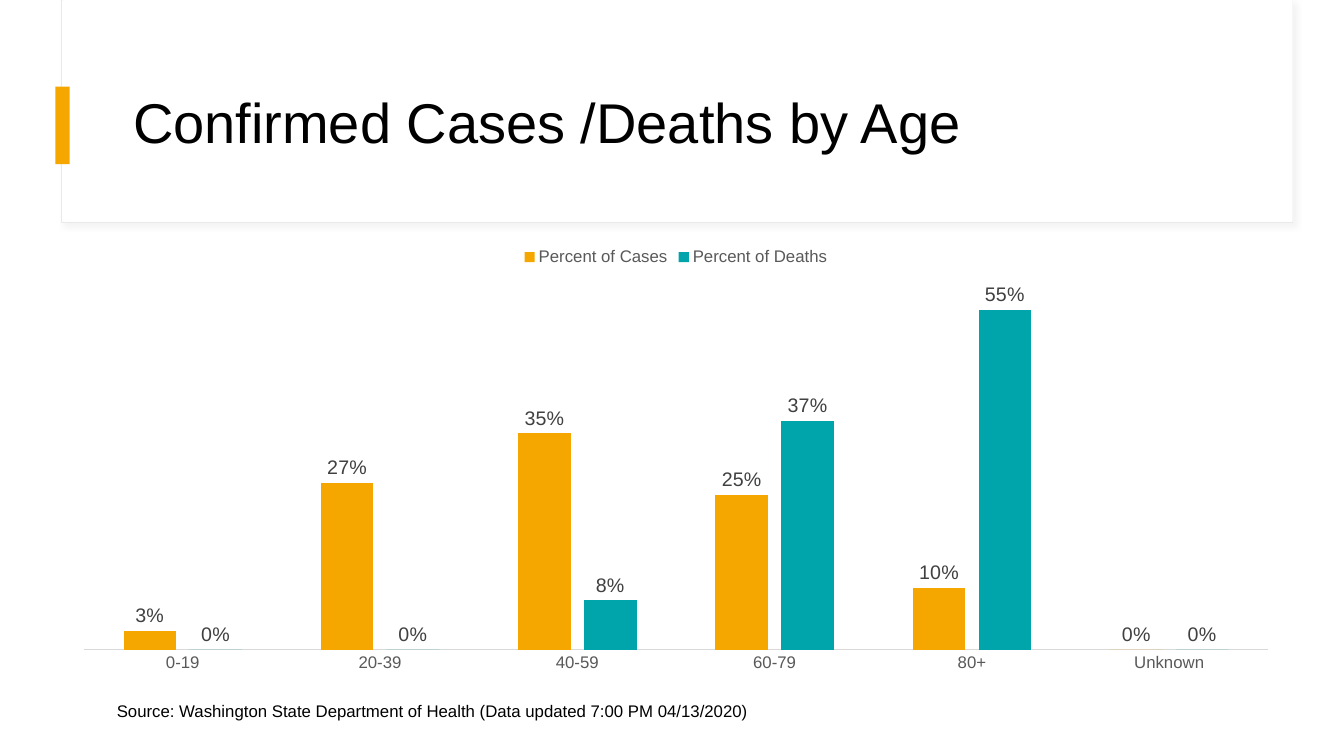
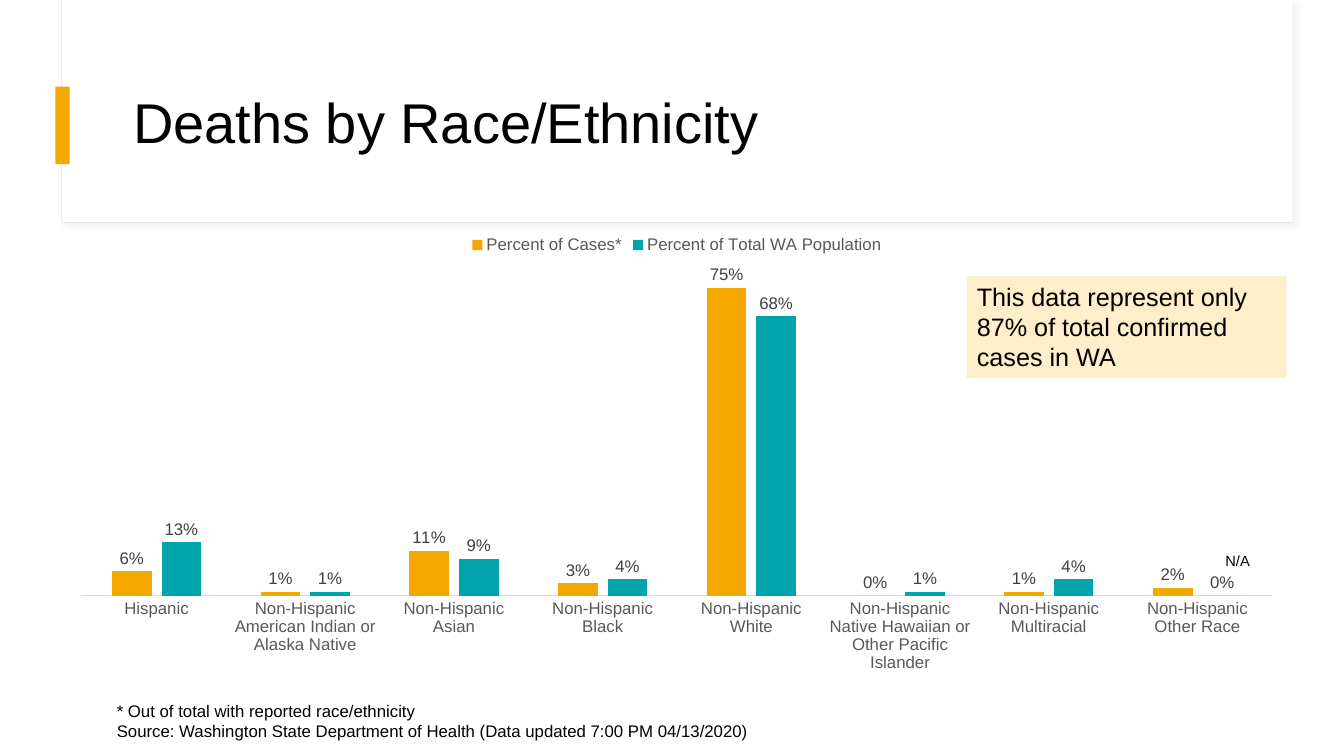
import pptx
import pptx.chart.data
import pptx.dml.color
import pptx.enum.chart
import pptx.enum.shapes
import pptx.enum.text
import pptx.oxml
import pptx.oxml.ns
import pptx.util

Inches = pptx.util.Inches
Pt = pptx.util.Pt
ANCHOR = pptx.enum.text.MSO_ANCHOR
ALIGN = pptx.enum.text.PP_ALIGN
FONT = "Arial"
COLORS = {
    "black": "000000",
    "white": "FFFFFF",
    "gold": "F5A700",
    "teal": "00A5AB",
    "cream": "FFEECA",
    "edge": "E9E9E9",
    "rule": "D9D9D9",
    "label": "404040",
    "axis": "595959",
}
SOURCE = "Source: Washington State Department of Health (Data updated 7:00 PM 04/13/2020)"

PAGES = [
    {
        "title": "Confirmed Cases /Deaths by Age",
        "box": (0.59, 2.35, 12.23, 4.4),
        "groups": ["0-19", "20-39", "40-59", "60-79", "80+", "Unknown"],
        "series": [
            ("Percent of Cases", [0.03, 0.27, 0.35, 0.25, 0.1, 0]),
            ("Percent of Deaths", [0, 0, 0.08, 0.37, 0.55, 0]),
        ],
        "top": 0.6,
        "size": 14,
        "notes": [],
        "footer": [SOURCE],
    },
    {
        "title": "Deaths by Race/Ethnicity",
        "box": (0.57, 2.23, 12.29, 4.52),
        "groups": [
            "Hispanic",
            "Non-Hispanic American Indian or Alaska Native",
            "Non-Hispanic Asian",
            "Non-Hispanic Black",
            "Non-Hispanic White",
            "Non-Hispanic Native Hawaiian or Other Pacific Islander",
            "Non-Hispanic Multiracial",
            "Non-Hispanic Other Race",
        ],
        "series": [
            ("Percent of Cases*", [0.06, 0.01, 0.11, 0.03, 0.75, 0, 0.01, 0.02]),
            ("Percent of Total WA Population", [0.13, 0.01, 0.09, 0.04, 0.68, 0.01, 0.04, 0]),
        ],
        "top": 0.8,
        "size": 12,
        "notes": [
            ((9.59, 2.74, 3.17, 1.01), "cream", 18, ALIGN.LEFT, ANCHOR.TOP,
             "This data represent only 87% of total confirmed cases in WA"),
            ((12.03, 5.43, 0.49, 0.26), None, 10.5, ALIGN.CENTER, ANCHOR.MIDDLE, "N/A"),
        ],
        "footer": ["* Out of total with reported race/ethnicity", SOURCE],
    },
]


def style(font, size, color):
    font.name = FONT
    font.size = Pt(size)
    font.color.rgb = pptx.dml.color.RGBColor.from_string(COLORS[color])


def paint(fill, color):
    fill.solid()
    fill.fore_color.rgb = pptx.dml.color.RGBColor.from_string(COLORS[color])


deck = pptx.Presentation()
deck.slide_width = Inches(13.33)
deck.slide_height = Inches(7.5)
layout = deck.slide_layouts[5]

for number, page in enumerate(PAGES):
    slide = deck.slides.add_slide(layout)

    if number == 0:
        bands = [
            ((0.61, 0, 12.21, 2.21), "white", "edge"),
            ((0.62, 0, 12.2, 2.2), "white", None),
            ((0.55, 0.86, 0.14, 0.77), "gold", None),
        ]
        for place, (box, color, edge) in enumerate(bands):
            band = slide.shapes.add_shape(
                pptx.enum.shapes.MSO_SHAPE.RECTANGLE, *map(Inches, box))
            band.shadow.inherit = False
            paint(band.fill, color)
            if edge:
                paint(band.line.fill, edge)
                band.line.width = Pt(0.75)
                glow = band.element.spPr.find(pptx.oxml.ns.qn("a:effectLst"))
                glow.append(pptx.oxml.parse_xml(
                    f'<a:outerShdw {pptx.oxml.ns.nsdecls("a")} blurRad="{Pt(4)}" '
                    f'dist="{Pt(3)}" dir="2700000" algn="tl" rotWithShape="0">'
                    f'<a:srgbClr val="{COLORS["rule"]}"><a:alpha val="30000"/></a:srgbClr>'
                    '</a:outerShdw>'))
            else:
                band.line.fill.background()
            layout.shapes.element.insert(2 + place, band.element)

    title = slide.shapes.title
    title.left, title.top, title.width, title.height = map(Inches, (1.22, 0.6, 11.12, 1.29))
    title.text_frame.vertical_anchor = ANCHOR.MIDDLE
    line = title.text_frame.paragraphs[0]
    line.alignment = ALIGN.LEFT
    line.line_spacing = 0.9
    run = line.add_run()
    run.text = page["title"]
    style(run.font, 40, "black")

    data = pptx.chart.data.CategoryChartData(number_format="0%")
    data.categories = page["groups"]
    for name, values in page["series"]:
        data.add_series(name, values)
    chart = slide.shapes.add_chart(
        pptx.enum.chart.XL_CHART_TYPE.COLUMN_CLUSTERED, *map(Inches, page["box"]), data).chart
    style(chart.font, 10, "black")
    chart.has_title = False
    chart.has_legend = True
    chart.legend.position = pptx.enum.chart.XL_LEGEND_POSITION.TOP
    chart.legend.include_in_layout = False
    style(chart.legend.font, 12, "axis")

    axis = chart.category_axis
    axis.major_tick_mark = pptx.enum.chart.XL_TICK_MARK.NONE
    style(axis.tick_labels.font, 12, "axis")
    paint(axis.format.line.fill, "rule")
    axis.format.line.width = Pt(0.75)
    scale = chart.value_axis
    scale.minimum_scale = 0
    scale.maximum_scale = page["top"]
    scale.has_major_gridlines = False
    scale.visible = False

    plot = chart.plots[0]
    plot.gap_width = 150
    plot.overlap = -25
    plot.vary_by_categories = False
    for series, color in zip(plot.series, ("gold", "teal")):
        paint(series.format.fill, color)
        series.invert_if_negative = False
        labels = series.data_labels
        labels.show_value = True
        labels.number_format = "0%"
        labels.number_format_is_linked = False
        labels.position = pptx.enum.chart.XL_LABEL_POSITION.OUTSIDE_END
        style(labels.font, page["size"], "label")

    foot = (1.06, 6.9, 10.65, 0.1 + 0.2 * len(page["footer"]))
    texts = page["notes"] + [(foot, None, 12, ALIGN.LEFT, ANCHOR.TOP, "\n".join(page["footer"]))]
    for box, color, size, align, anchor, words in texts:
        note = slide.shapes.add_textbox(*map(Inches, box))
        if color:
            paint(note.fill, color)
        frame = note.text_frame
        frame.word_wrap = True
        frame.vertical_anchor = anchor
        for place, text in enumerate(words.split("\n")):
            line = frame.add_paragraph() if place else frame.paragraphs[0]
            line.alignment = align
            run = line.add_run()
            run.text = text
            style(run.font, size, "black")

deck.save("out.pptx")
